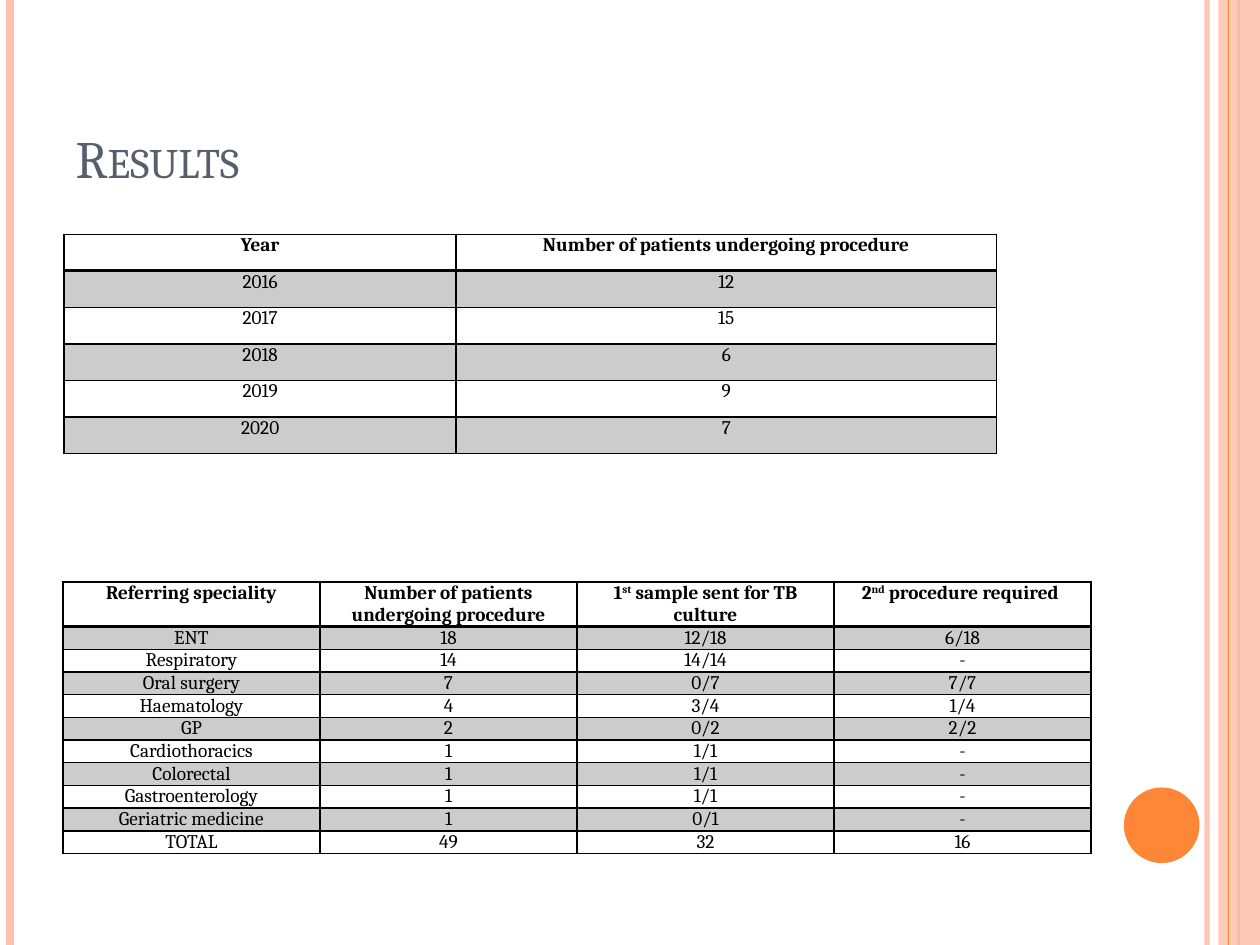
from lxml.etree import SubElement
from pptx import Presentation
from pptx.dml.color import RGBColor
from pptx.enum.shapes import MSO_CONNECTOR, MSO_SHAPE
from pptx.enum.text import MSO_ANCHOR, PP_ALIGN
from pptx.oxml.ns import qn
from pptx.util import Inches, Pt

FONT = "Cambria"
PEACH, ORANGE, SLATE, BLACK = "FEC3AE", "FE8637", "575F6D", "000000"

YEARS = [
    ("Year", "Number of patients undergoing procedure"),
    ("2016", "12"),
    ("2017", "15"),
    ("2018", "6"),
    ("2019", "9"),
    ("2020", "7"),
]
SPECIALITIES = [
    ("Referring speciality", "Number of patients undergoing procedure",
     "1^st^ sample sent for TB culture", "2^nd^ procedure required "),
    ("ENT", "18", "12/18", "6/18"),
    ("Respiratory", "14", "14/14", "-"),
    ("Oral surgery", "7", "0/7", "7/7"),
    ("Haematology", "4", "3/4", "1/4"),
    ("GP", "2", "0/2", "2/2"),
    ("Cardiothoracics", "1", "1/1", "-"),
    ("Colorectal", "1", "1/1", "-"),
    ("Gastroenterology", "1", "1/1", "-"),
    ("Geriatric medicine", "1", "0/1", "-"),
    ("TOTAL", "49", "32", "16"),
]


def paint(color_format, color):
    color_format.rgb = RGBColor.from_string(color)


def set_alpha(parent, percent):
    color = next(parent.iter(qn("a:srgbClr")))
    SubElement(color, qn("a:alpha")).set("val", str(percent * 1000))


def fill_solid(target, color, alpha=100):
    target.fill.solid()
    paint(target.fill.fore_color, color)
    if alpha < 100:
        parent = target._tc.tcPr if hasattr(target, "_tc") else target._element.spPr
        set_alpha(parent.find(qn("a:solidFill")), alpha)


def format_span(span, size, color, bold=False):
    span.font.name = FONT
    span.font.size = Pt(size)
    span.font.bold = bold
    paint(span.font.color, color)


def add_stripe(page, x, height, color, width, alpha=100):
    stripe = page.shapes.add_connector(
        MSO_CONNECTOR.STRAIGHT, Inches(x), 0, Inches(x), Inches(height))
    stripe.line.width = Pt(width)
    paint(stripe.line.color, color)
    properties = stripe._element.spPr
    if alpha < 100:
        set_alpha(properties, alpha)
    SubElement(properties, qn("a:effectLst"))


def add_block(page, kind, box, color, alpha=100):
    block = page.shapes.add_shape(kind, *map(Inches, box))
    block.shadow.inherit = False
    block.line.fill.background()
    fill_solid(block, color, alpha)


def add_decoration(page, height):
    add_stripe(page, 9.58, height, PEACH, 3, 93)
    add_stripe(page, 0.08, height, PEACH, 4.5)
    add_stripe(page, 9.83, height, ORANGE, 1.5)
    add_block(page, MSO_SHAPE.RECTANGLE, (9.67, 0, 0.33, height), PEACH, 87)
    add_stripe(page, 9.75, height, ORANGE, 0.75)
    add_block(page, MSO_SHAPE.OVAL, (8.92, 6.25, 0.6, 0.6), ORANGE)


def add_title(page, text, box):
    title = page.shapes.title
    title.left, title.top, title.width, title.height = map(Inches, box)
    frame = title.text_frame
    frame.text = text
    frame.vertical_anchor = MSO_ANCHOR.BOTTOM
    para = frame.paragraphs[0]
    para.alignment = PP_ALIGN.LEFT
    format_span(para.runs[0], 30, SLATE)
    para.runs[0]._r.get_or_add_rPr().set("cap", "small")


def set_borders(cell, top, bottom):
    properties = cell._tc.get_or_add_tcPr()
    for side, width in (("L", 1), ("R", 1), ("T", top), ("B", bottom)):
        line = SubElement(properties, qn(f"a:ln{side}"), w=str(Pt(width)))
        fill = SubElement(line, qn("a:solidFill"))
        SubElement(fill, qn("a:srgbClr"), val=BLACK)


def write_cell(cell, text, bold):
    cell.margin_left = cell.margin_right = Inches(0.07)
    cell.margin_top = cell.margin_bottom = 0
    para = cell.text_frame.paragraphs[0]
    para.alignment = PP_ALIGN.CENTER
    for index, part in enumerate(text.split("^")):
        span = para.add_run()
        span.text = part
        format_span(span, 11, BLACK, bold)
        if index % 2:
            span._r.get_or_add_rPr().set("baseline", "30000")


def add_grid(page, rows, box, column_widths, header_height, row_height):
    table = page.shapes.add_table(
        len(rows), len(column_widths), *map(Inches, box)).table
    for column, width in zip(table.columns, column_widths):
        column.width = Inches(width)
    for r, values in enumerate(rows):
        table.rows[r].height = Inches(row_height if r else header_height)
        for c, text in enumerate(values):
            cell = table.cell(r, c)
            write_cell(cell, text, bold=r == 0)
            set_borders(cell, 2 if r == 1 else 1, 2 if r == 0 else 1)
            if r % 2:
                fill_solid(cell, BLACK, 20)
            else:
                cell.fill.background()


def main():
    deck = Presentation()
    deck.slide_width, deck.slide_height = Inches(10), Inches(7.5)
    page = deck.slides.add_slide(deck.slide_layouts[5])
    add_decoration(page, 7.5)
    add_title(page, "Results", (0.5, 0.3, 8.17, 1.25))
    add_grid(page, YEARS, (0.51, 1.86, 7.4, 1.73), (3.11, 4.29), 0.29, 0.29)
    add_grid(page, SPECIALITIES, (0.5, 4.62, 8.17, 2.12), [2.04] * 4, 0.35, 0.18)
    deck.save("out.pptx")


if __name__ == "__main__":
    main()
